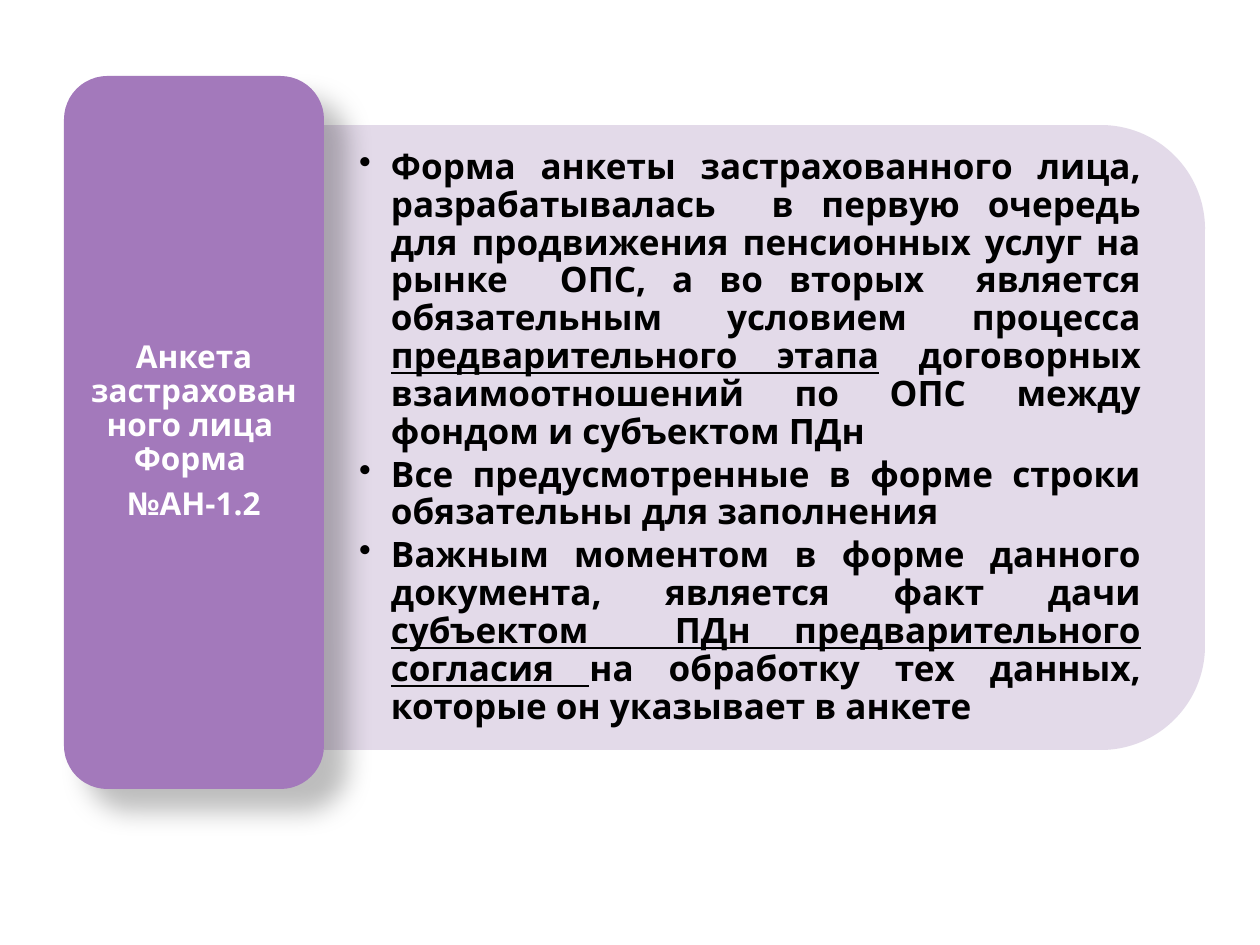
from lxml import etree
from pptx import Presentation
from pptx.dml.color import RGBColor
from pptx.enum.shapes import MSO_SHAPE
from pptx.enum.text import MSO_ANCHOR, PP_ALIGN
from pptx.oxml.ns import qn
from pptx.util import Pt

ROUND_TOP = MSO_SHAPE.ROUND_2_SAME_RECTANGLE
ROUND_RECT = MSO_SHAPE.ROUNDED_RECTANGLE
MIDDLE = MSO_ANCHOR.MIDDLE
CENTER, JUSTIFY = PP_ALIGN.CENTER, PP_ALIGN.JUSTIFY

FONT = "Noto Sans"
COLORS = {"panel": "E0D7E7", "title": "A379BB", "shadow": "000000",
          "body_text": "000000", "title_text": "FFFFFF"}
INDENT = 32

# Each paragraph is a list of (text, underlined) runs
TITLE = [
    [("Анкета застрахованного лица \vФорма ", False)],
    [("№АН-1.2", False)],
]
BODY = [
    [("Форма анкеты застрахованного лица, разрабатывалась  в первую очередь "
      "для продвижения пенсионных услуг на рынке  ОПС, а во вторых  является "
      "обязательным условием процесса ", False),
     ("предварительного этапа", True),
     (" договорных взаимоотношений по ОПС между фондом и субъектом ПДн", False)],
    [("Все предусмотренные в форме строки обязательны для заполнения", False)],
    [("Важным моментом в форме данного документа, является факт дачи ", False),
     ("субъектом  ПДн предварительного согласия ", True),
     ("на обработку тех данных, которые он указывает в анкете", False)],
]


def px(n):
    return round(n * 914400 / 126)


def set_attrs(obj, values):
    for name, value in values.items():
        setattr(obj, name, value)


def add_block(s, kind, box, color):
    sp = s.shapes.add_shape(kind, *map(px, box))
    sp.shadow.inherit = False
    sp.fill.solid()
    sp.fill.fore_color.rgb = RGBColor.from_string(COLORS[color])
    sp.line.fill.background()
    return sp


def set_alpha(color_el, percent):
    etree.SubElement(color_el, qn("a:alpha"), val=str(percent * 1000))


def add_shadow(sp, blur, dist, angle, alpha):
    effects = sp._element.spPr.find(qn("a:effectLst"))
    shadow = etree.SubElement(effects, qn("a:outerShdw"), blurRad=str(Pt(blur)),
                              dist=str(Pt(dist)), dir=str(angle * 60000),
                              algn="tl", rotWithShape="0")
    color = etree.SubElement(shadow, qn("a:srgbClr"), val=COLORS["shadow"])
    set_alpha(color, alpha)


def add_bullet(p):
    pPr = p._p.get_or_add_pPr()
    pPr.set("marL", str(px(INDENT)))
    pPr.set("indent", str(-px(INDENT)))
    etree.SubElement(pPr, qn("a:buChar"), char="•")


def add_text(s, box, insets, paragraphs, size, color, fmt, bullets=False):
    tf = s.shapes.add_textbox(*map(px, box)).text_frame
    across, down = map(px, insets)
    set_attrs(tf, {"word_wrap": True, "vertical_anchor": MIDDLE,
                   "margin_left": across, "margin_right": across,
                   "margin_top": down, "margin_bottom": down})
    for i, runs in enumerate(paragraphs):
        p = tf.add_paragraph() if i else tf.paragraphs[0]
        set_attrs(p, {"line_spacing": 0.9, **fmt})
        if bullets:
            add_bullet(p)
        for text, underline in runs:
            for j, line in enumerate(text.split("\v")):
                if j:
                    p.add_line_break()
                r = p.add_run()
                r.text = line
                set_attrs(r.font, {"name": FONT, "size": Pt(size),
                                   "bold": True, "underline": underline})
                r.font.color.rgb = RGBColor.from_string(COLORS[color])


def main():
    prs = Presentation()
    prs.slide_width, prs.slide_height = px(1260), px(945)
    s = prs.slides.add_slide(prs.slide_layouts[6])

    # Description panel, turned so that its rounded side faces right
    panel = add_block(s, ROUND_TOP, (452, -3, 625, 881), "panel")
    panel.rotation = 90
    set_alpha(panel._element.spPr.find(qn("a:solidFill"))[0], 90)
    add_text(s, (325, 156, 850, 564), (34, 18), BODY, 20, "body_text",
             {"alignment": JUSTIFY, "space_after": Pt(3)}, bullets=True)

    # Title block with its shadow
    title = add_block(s, ROUND_RECT, (64, 76, 260, 713), "title")
    add_shadow(title, blur=15, dist=18, angle=45, alpha=26)
    add_text(s, (77, 88, 234, 688), (9, 5), TITLE, 18, "title_text",
             {"alignment": CENTER, "space_after": Pt(6.3)})

    prs.save("out.pptx")


if __name__ == "__main__":
    main()
